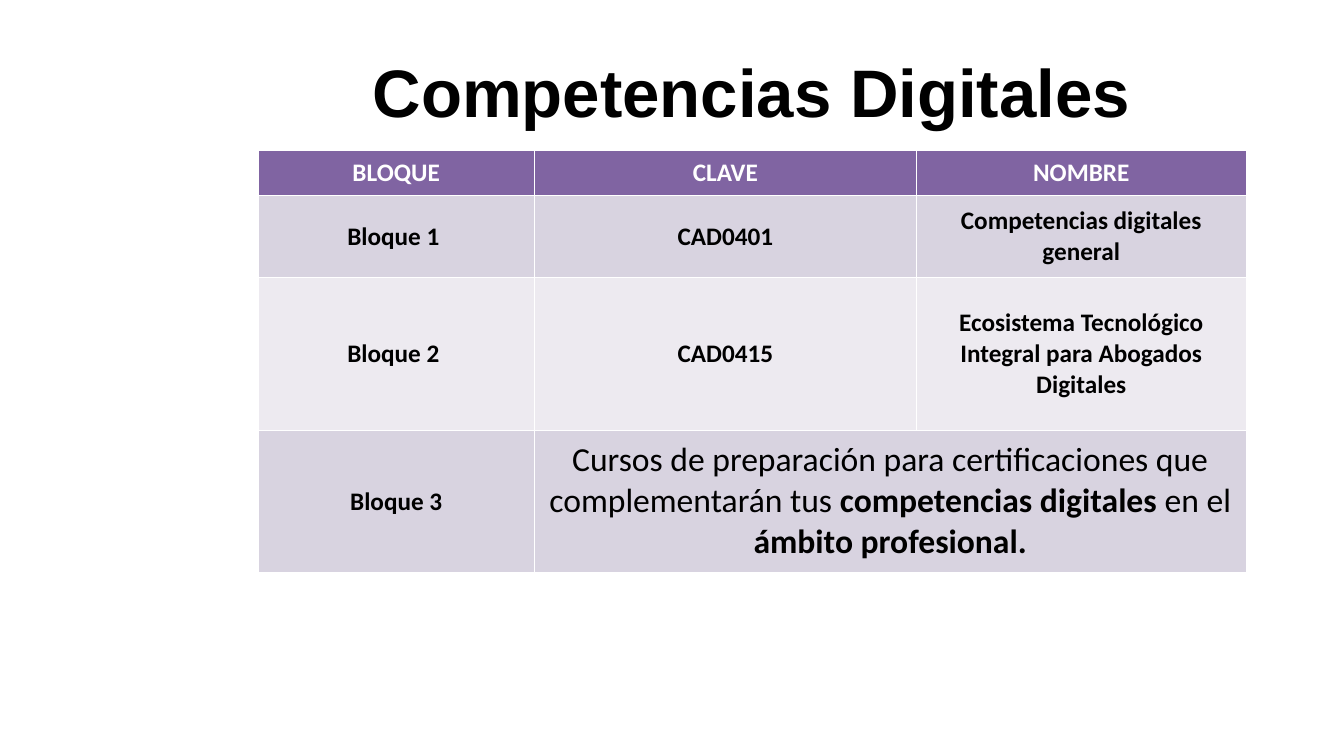
"""Build the Competencias Digitales slide."""
from pptx import Presentation
from pptx.dml.color import RGBColor
from pptx.enum.text import MSO_ANCHOR, PP_ALIGN
from pptx.util import Inches, Pt

MIDDLE = MSO_ANCHOR.MIDDLE
CENTER = PP_ALIGN.CENTER

COLORS = {"head": "8064A2", "odd": "D8D3E0", "even": "EDEAF0",
          "white": "FFFFFF", "black": "000000"}
TITLE = "Competencias Digitales"
ROWS = [
    ["BLOQUE", "CLAVE", "NOMBRE"],
    ["Bloque 1 ", "CAD0401", "Competencias digitales general"],
    ["Bloque 2 ", "CAD0415",
     "Ecosistema Tecnológico Integral para Abogados Digitales"],
    ["Bloque 3"],
]
COURSES = [
    ("Cursos de preparación para certificaciones que complementarán tus ", False),
    ("competencias digitales", True),
    (" en el ", False),
    ("ámbito profesional.", True),
]
WIDTHS = [2.74, 3.79, 3.27]
HEIGHTS = [0.45, 0.81, 1.52, 1.41]


def style(para, face, size, color, bold=None):
    para.alignment = CENTER
    font = para.font
    font.name, font.size, font.bold = face, Pt(size), bold
    font.color.rgb = RGBColor.from_string(COLORS[color])


def add_title(slide):
    box = slide.shapes.add_textbox(
        Inches(2.33), Inches(0.32), Inches(10.25), Inches(1.16))
    frame = box.text_frame
    frame.word_wrap = True
    frame.vertical_anchor = MIDDLE
    para = frame.paragraphs[0]
    para.text = TITLE
    style(para, "Arial", 48, "black", True)


def add_blocks(slide):
    table = slide.shapes.add_table(
        len(HEIGHTS), len(WIDTHS), Inches(2.56), Inches(1.49),
        Inches(sum(WIDTHS)), Inches(sum(HEIGHTS))).table
    for col, width in zip(table.columns, WIDTHS):
        col.width = Inches(width)
    for i, height in enumerate(HEIGHTS):
        table.rows[i].height = Inches(height)
        fill = "head" if i == 0 else "odd" if i % 2 else "even"
        for cell in table.rows[i].cells:
            cell.fill.solid()
            cell.fill.fore_color.rgb = RGBColor.from_string(COLORS[fill])
            cell.vertical_anchor = MIDDLE
        for j, text in enumerate(ROWS[i]):
            para = table.cell(i, j).text_frame.paragraphs[0]
            para.text = text
            style(para, "Calibri", 18, "black" if i else "white", True)

    last = len(HEIGHTS) - 1
    wide = table.cell(last, 1)
    wide.merge(table.cell(last, 2))
    para = wide.text_frame.paragraphs[0]
    for text, bold in COURSES:
        run = para.add_run()
        run.text = text
        run.font.bold = bold
    style(para, "Calibri", 24, "black")


def main():
    deck = Presentation()
    deck.slide_width, deck.slide_height = Inches(13.33), Inches(7.5)
    slide = deck.slides.add_slide(deck.slide_layouts[6])
    add_title(slide)
    add_blocks(slide)
    deck.save("out.pptx")


if __name__ == "__main__":
    main()
